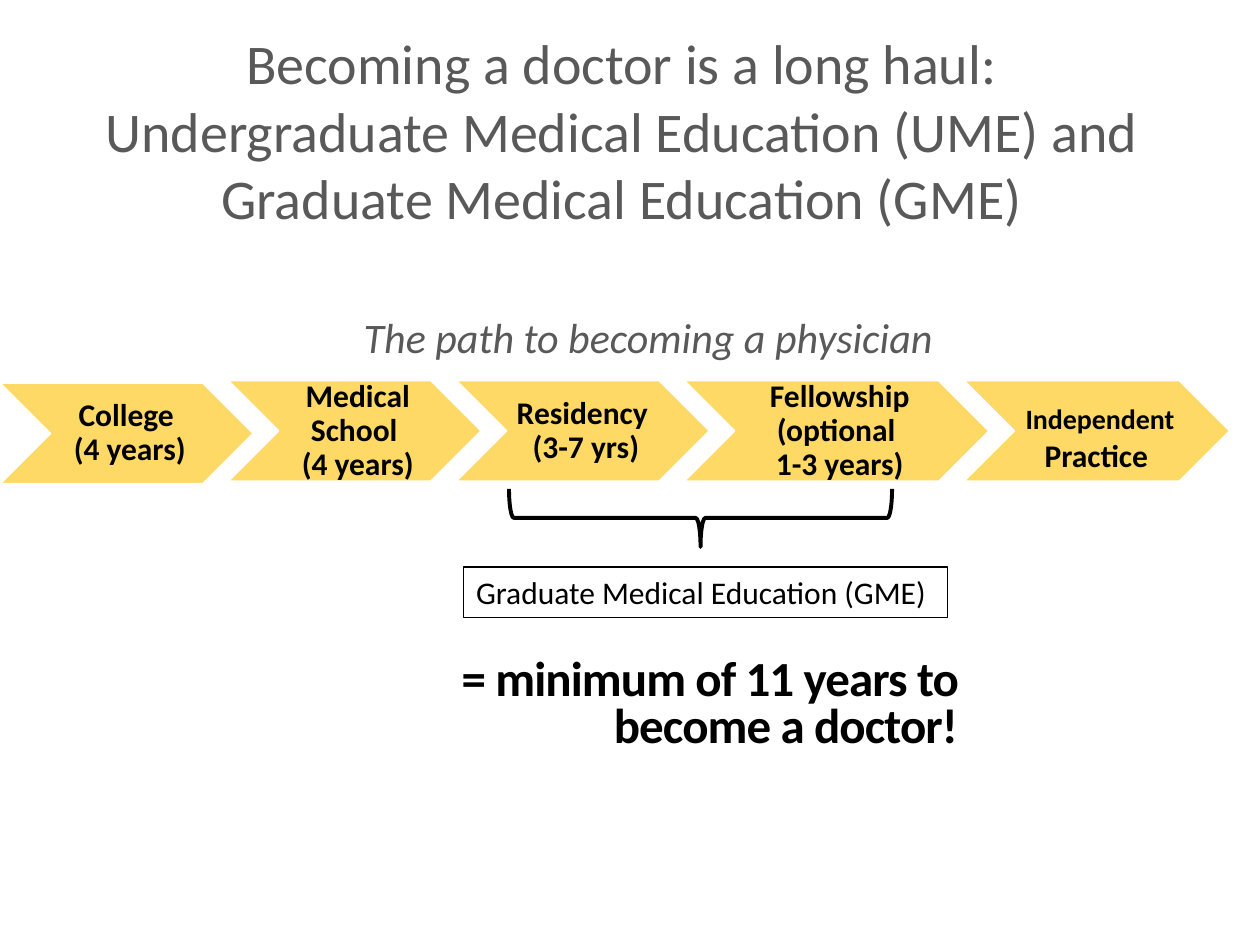
from dataclasses import dataclass

from pptx import Presentation
from pptx.dml.color import RGBColor as RGB
from pptx.enum.shapes import MSO_SHAPE as Shape
from pptx.enum.text import MSO_ANCHOR as Anchor, PP_ALIGN as Align
from pptx.util import Inches, Pt


@dataclass(frozen=True)
class Theme:
    font: str = "Calibri"
    ink: RGB = RGB(0, 0, 0)
    gray: RGB = RGB(0x59, 0x59, 0x59)
    gold: RGB = RGB(0xFF, 0xD9, 0x66)
    white: RGB = RGB(255, 255, 255)
    title: int = 32
    total: int = 28
    sub: int = 24
    body: int = 18
    small: int = 16


T = Theme()

# Width, drop below the row's top, and (text, size) runs of each stage
STAGES = [
    (2.01, 0.02, [("College \n(4 years)", T.body)]),
    (2.01, 0, [("Medical School \n(4 years)", T.body)]),
    (2.01, 0, [("Residency \n(3-7 yrs)", T.body)]),
    (2.42, 0, [("Fellowship\n(optional \n1-3 years)", T.body)]),
    (2.11, 0, [("Independent", T.small), (" ", T.total), ("Practice ", T.body)]),
]


def add_text(slide, box, runs, color=T.ink, align=Align.CENTER,
             anchor=Anchor.TOP, bold=False, italic=False, space=1.0):
    """Add a wrapped one-paragraph text box; a newline is a line break."""
    shape = slide.shapes.add_textbox(*map(Inches, box))
    frame = shape.text_frame
    frame.word_wrap = True
    frame.vertical_anchor = anchor
    para = frame.paragraphs[0]
    para.alignment = align
    para.line_spacing = space
    for text, size in runs:
        for i, line in enumerate(text.split("\n")):
            if i:
                para.add_line_break()
            run = para.add_run()
            run.text = line
            font = run.font
            font.name, font.size = T.font, Pt(size)
            font.bold, font.italic = bold, italic
            font.color.rgb = color
    return shape


def add_stage(slide, box, runs):
    x, y, w, h = box
    arrow = slide.shapes.add_shape(Shape.CHEVRON, *map(Inches, box))
    arrow.shadow.inherit = False
    arrow.fill.solid()
    arrow.fill.fore_color.rgb = T.gold
    arrow.line.color.rgb = T.white
    arrow.line.width = Pt(1)
    notch = h / 2
    label = add_text(slide, (x + notch, y, w - 2 * notch, h), runs,
                     anchor=Anchor.MIDDLE, bold=True, space=0.9)
    frame = label.text_frame
    frame.margin_left = Inches(0.08)
    frame.margin_top = frame.margin_right = frame.margin_bottom = Inches(0.03)


def add_path(slide, x, y, h, lap=0.2):
    """Lay the stages in a row, each starting inside the one before."""
    for w, drop, runs in STAGES:
        add_stage(slide, (x, y + drop, w, h), runs)
        x += w - lap


def add_brace(slide, x, y, w, h):
    """Add a brace that opens upward and fills the box."""
    turned = (x + (w - h) / 2, y + (h - w) / 2, h, w)
    brace = slide.shapes.add_shape(Shape.LEFT_BRACE, *map(Inches, turned))
    brace.rotation = 270
    brace.shadow.inherit = False
    brace.fill.background()
    brace.line.color.rgb = T.ink
    brace.line.width = Pt(2.25)


def add_gme(slide, box):
    label = add_text(slide, box, [("Graduate Medical Education (GME)", T.body)],
                     align=Align.LEFT)
    label.line.color.rgb = T.ink
    label.line.width = Pt(0.75)


def add_total(slide, box):
    shape = add_text(slide, box,
                     [("= minimum of 11 years to become a doctor!", T.total)],
                     align=Align.RIGHT, bold=True, space=0.8)
    for run in shape.text_frame.paragraphs[0].runs:
        run.font._element.set("spc", "-50")


def main():
    deck = Presentation()
    deck.slide_width, deck.slide_height = Inches(10), Inches(7.5)
    slide = deck.slides.add_slide(deck.slide_layouts[6])
    title = ("Becoming a doctor is a long haul:\nUndergraduate Medical "
             "Education (UME) and Graduate Medical Education (GME)")
    add_text(slide, (0.63, 0.56, 8.61, 0.94), [(title, T.title)], T.gray,
             anchor=Anchor.MIDDLE)
    add_text(slide, (1.68, 2.42, 6.93, 0.62),
             [("The path to becoming a physician", T.sub)], T.gray, italic=True)
    add_total(slide, (3.5, 5.18, 4.2, 0.85))
    add_path(slide, 0, 3.02, 0.8)
    add_brace(slide, 4.04, 3.88, 3.04, 0.46)
    add_gme(slide, (3.68, 4.5, 3.84, 0.4))
    deck.save("out.pptx")


if __name__ == "__main__":
    main()
